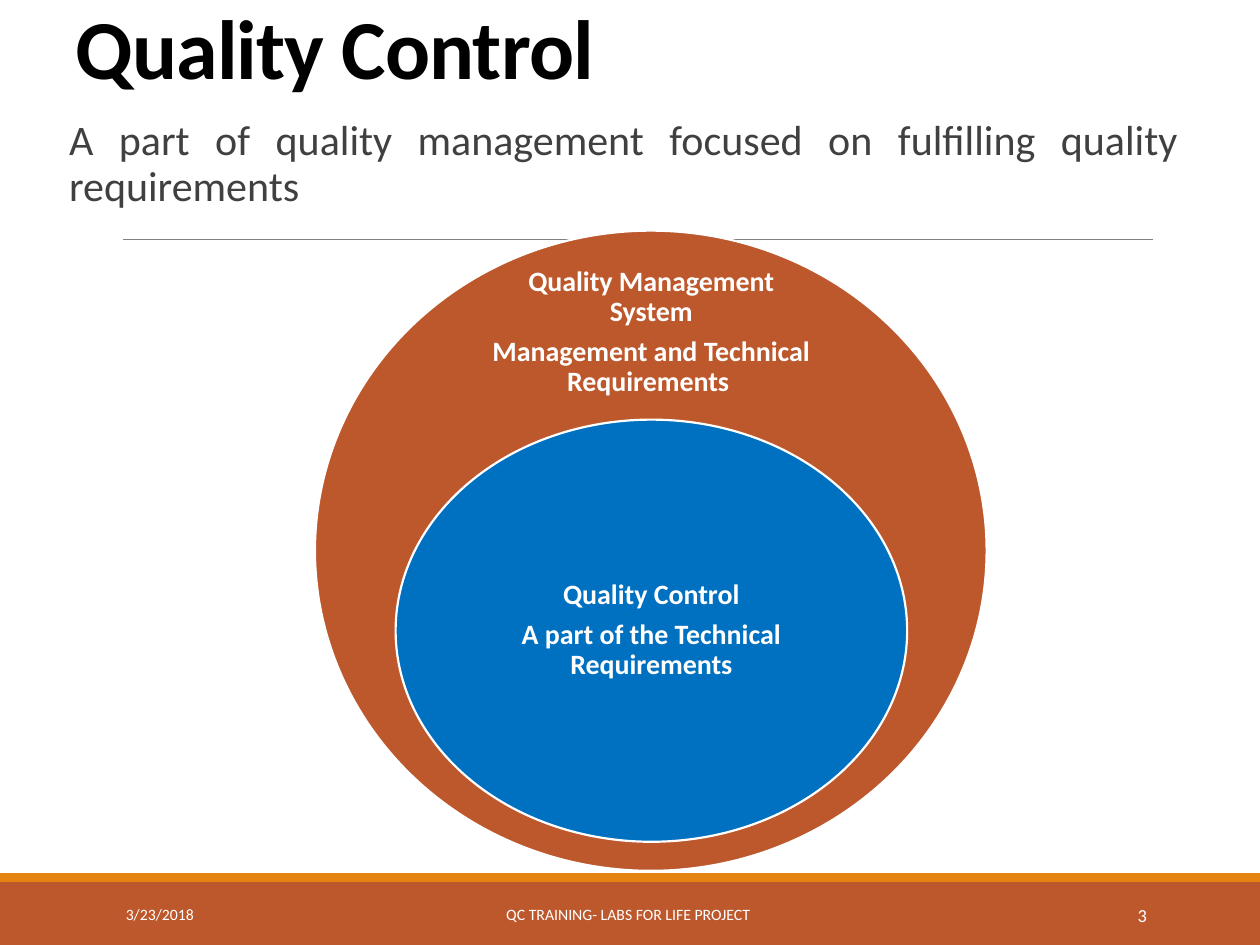
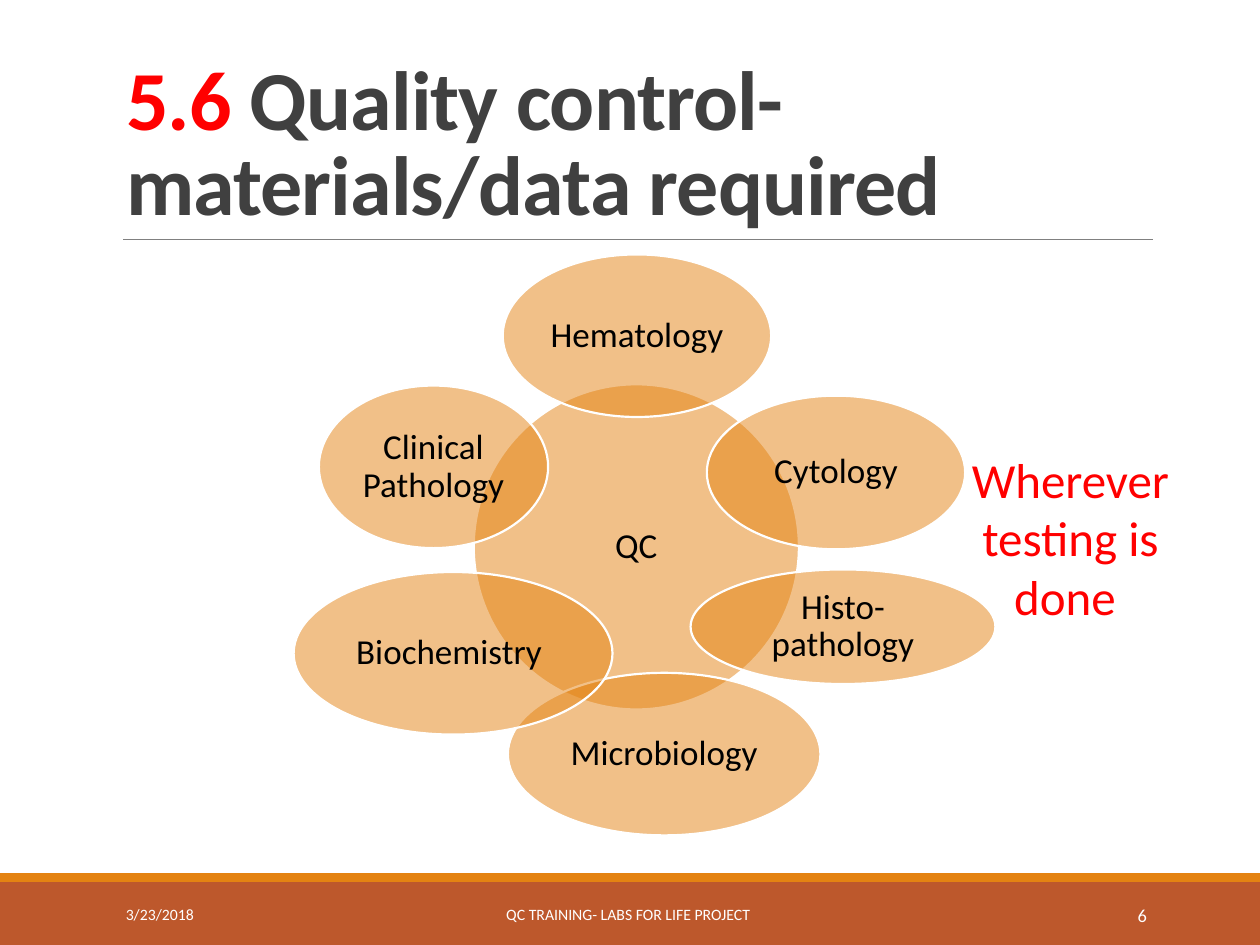
from dataclasses import dataclass

from lxml.etree import SubElement
from pptx import Presentation
from pptx.dml.color import RGBColor as Rgb
from pptx.enum.shapes import MSO_CONNECTOR as Connector, MSO_SHAPE as Shape
from pptx.enum.text import MSO_ANCHOR as Anchor, MSO_AUTO_SIZE as AutoSize, PP_ALIGN as Align
from pptx.oxml.ns import qn
from pptx.util import Pt


@dataclass(frozen=True)
class Theme:
    font: str = "Calibri"
    rust: Rgb = Rgb(0xBD, 0x58, 0x2C)
    orange: Rgb = Rgb(0xE4, 0x83, 0x12)
    blue: Rgb = Rgb(0x00, 0x70, 0xC0)
    red: Rgb = Rgb(0xFF, 0x00, 0x00)
    dark: Rgb = Rgb(0x40, 0x40, 0x40)
    grey: Rgb = Rgb(0x80, 0x80, 0x80)
    black: Rgb = Rgb(0, 0, 0)
    white: Rgb = Rgb(0xFF, 0xFF, 0xFF)
    title: float = 48
    callout: float = 28
    lead: float = 24
    department: float = 20
    circle: float = 16
    page_number: float = 10.5
    footer: float = 9


THEME = Theme()
PAGE_WIDTH, PAGE_HEIGHT = 720, 540
FOOTER_TOP, FOOTER_HEIGHT = 508.3, 28.8

# Ellipses in points: label, left, top, width, height
DEPARTMENTS = [
    ("QC", 270.7, 219.6, 185.8, 185.8),
    ("Hematology", 287.3, 145.4, 153.4, 92.9),
    ("Cytology", 403.9, 226.1, 147.6, 87.8),
    ("Histo-pathology", 394.6, 325.4, 174.2, 65.5),
    ("Microbiology", 290.2, 384.5, 178.6, 92.9),
    ("Biochemistry ", 167.8, 326.9, 182.2, 92.9),
    ("Clinical Pathology", 182.2, 220.3, 131, 92.9),
]


def points(*values):
    return [Pt(value) for value in values]


def style_span(span, size, color, bold=False):
    font = span.font
    font.name, font.size, font.bold = THEME.font, Pt(size), bold
    font.color.rgb = color


def write(box, text, size, color, align=Align.CENTER, anchor=Anchor.MIDDLE,
          bold=False, line_spacing=1.0, gap=0, inset=None):
    """Fill a box with one paragraph for each line of text."""
    frame = box.text_frame
    frame.text = text
    frame.word_wrap = True
    frame.vertical_anchor = anchor
    if inset is not None:
        frame.margin_left = frame.margin_right = Pt(inset)
        frame.margin_top = frame.margin_bottom = Pt(inset)
    for para in frame.paragraphs:
        para.alignment = align
        para.line_spacing = line_spacing
        para.space_after = Pt(gap)
        for span in para.runs:
            style_span(span, size, color, bold)


def add_text(page, place, text, size, color, **options):
    box = page.shapes.add_textbox(*points(*place))
    write(box, text, size, color, **options)
    return box


def add_filled(page, kind, place, fill=None, line=None, alpha=None):
    shape = page.shapes.add_shape(kind, *points(*place))
    shape.shadow.inherit = False
    if fill is None:
        shape.fill.background()
    else:
        shape.fill.solid()
        shape.fill.fore_color.rgb = fill
    if alpha is not None:
        color = shape.fill._xPr.find(qn("a:solidFill"))[0]
        SubElement(color, qn("a:alpha"), val=str(alpha * 1000))
    if line is None:
        shape.line.fill.background()
    else:
        shape.line.color.rgb = line
        shape.line.width = Pt(1.25)
    return shape


def add_title(page, place, *parts):
    """Place the title and write its (text, colour) parts."""
    title = page.shapes.title
    title.left, title.top, title.width, title.height = points(*place)
    frame = title.text_frame
    frame.auto_size = AutoSize.NONE
    frame.word_wrap = True
    frame.vertical_anchor = Anchor.BOTTOM
    para = frame.paragraphs[0]
    para.alignment = Align.LEFT
    para.line_spacing = 0.85
    for text, color in parts:
        span = para.add_run()
        span.text = text
        style_span(span, THEME.title, color, bold=True)
        span.font._element.set("spc", "-50")


def add_text_shadow(box):
    for para in box.text_frame.paragraphs:
        for span in para.runs:
            effects = SubElement(span.font._element, qn("a:effectLst"))
            # Effects come right after the fill
            span.font._element.find(qn("a:solidFill")).addnext(effects)
            shadow = SubElement(effects, qn("a:outerShdw"), blurRad="38100",
                                dist="38100", dir="2700000", algn="tl")
            color = SubElement(shadow, qn("a:srgbClr"), val="000000")
            SubElement(color, qn("a:alpha"), val="43000")


def add_page(deck, number):
    """Add a page with its bands, rule and footer."""
    page = deck.slides.add_slide(deck.slide_layouts[5])
    add_filled(page, Shape.RECTANGLE, (0, 504, PAGE_WIDTH, 36), THEME.rust)
    add_filled(page, Shape.RECTANGLE, (0, 499, PAGE_WIDTH, 5), THEME.orange)

    rule = page.shapes.add_connector(Connector.STRAIGHT, *points(70.5, 136.8, 659, 136.8))
    rule.line.color.rgb = THEME.grey
    rule.line.width = Pt(0.5)
    SubElement(rule._element.spPr, qn("a:effectLst"))

    footer_parts = [
        ("3/23/2018", 64.8, 146.2, THEME.footer, Align.LEFT),
        ("QC TRAINING- LABS FOR LIFE PROJECT ", 217.4, 285.1, THEME.footer, Align.CENTER),
        (str(number), 584.6, 77.8, THEME.page_number, Align.RIGHT),
    ]
    for text, left, width, size, align in footer_parts:
        add_text(page, (left, FOOTER_TOP, width, FOOTER_HEIGHT), text, size,
                 THEME.white, align=align)
    return page


def build_definition(deck):
    page = add_page(deck, 3)
    add_title(page, (36, 8.6, 648, 50.4), ("Quality Control", THEME.black))
    add_text(page, (32.4, 64.8, 648, 77.8),
             "A part of quality management focused on fulfilling quality requirements",
             THEME.lead, THEME.dark, align=Align.JUSTIFY, anchor=Anchor.TOP,
             line_spacing=0.9)

    # Nested circles
    label = dict(size=THEME.circle, color=THEME.white, bold=True,
                 line_spacing=0.9, gap=0.35 * THEME.circle, inset=8.6)
    add_filled(page, Shape.OVAL, (180, 131.8, 383.8, 365.8), THEME.rust, THEME.white)
    add_text(page, (271.4, 159.1, 201.6, 61.9),
             "Quality Management System\nManagement and Technical Requirements ", **label)
    control = add_filled(page, Shape.OVAL, (226.1, 239.8, 292.3, 241.2),
                         THEME.blue, THEME.white)
    write(control, "Quality Control\nA part of the Technical Requirements", **label)


def build_departments(deck):
    page = add_page(deck, 6)
    add_title(page, (64.8, 22.3, 625, 114.5), ("5.6", THEME.red),
              (" Quality control- materials/data required", THEME.dark))

    # Departments around the centre
    for name, *place in DEPARTMENTS:
        oval = add_filled(page, Shape.OVAL, place, THEME.orange, THEME.white, alpha=50)
        write(oval, name, THEME.department, THEME.black, line_spacing=0.9, inset=2.2)

    # Callout
    callout = add_filled(page, Shape.OVAL, (509.8, 172.1, 203.8, 270))
    write(callout, "Wherever testing is done ", THEME.callout, THEME.red)
    add_text_shadow(callout)


def main():
    deck = Presentation()
    deck.slide_width, deck.slide_height = points(PAGE_WIDTH, PAGE_HEIGHT)
    build_definition(deck)
    build_departments(deck)
    deck.save("out.pptx")


if __name__ == "__main__":
    main()
